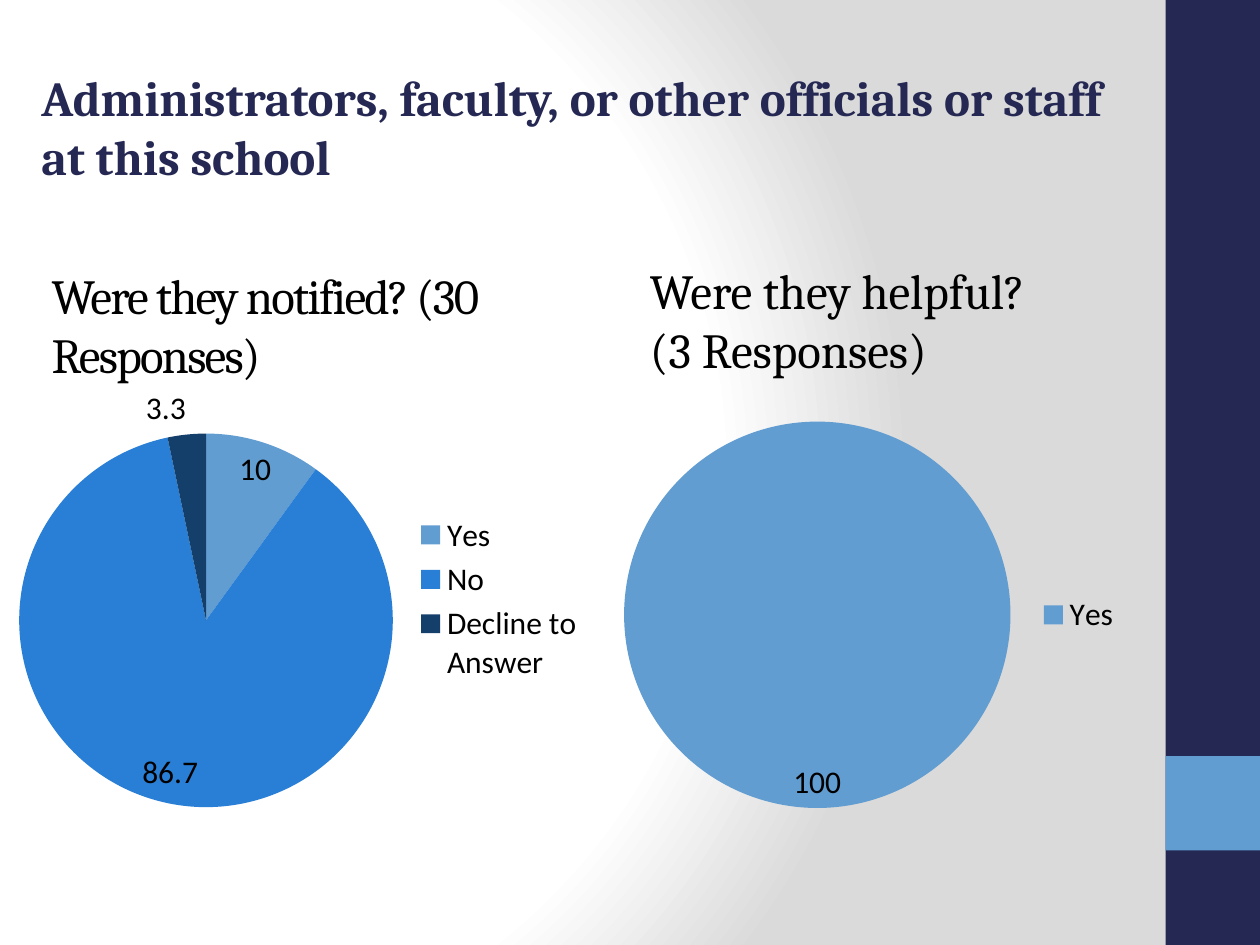
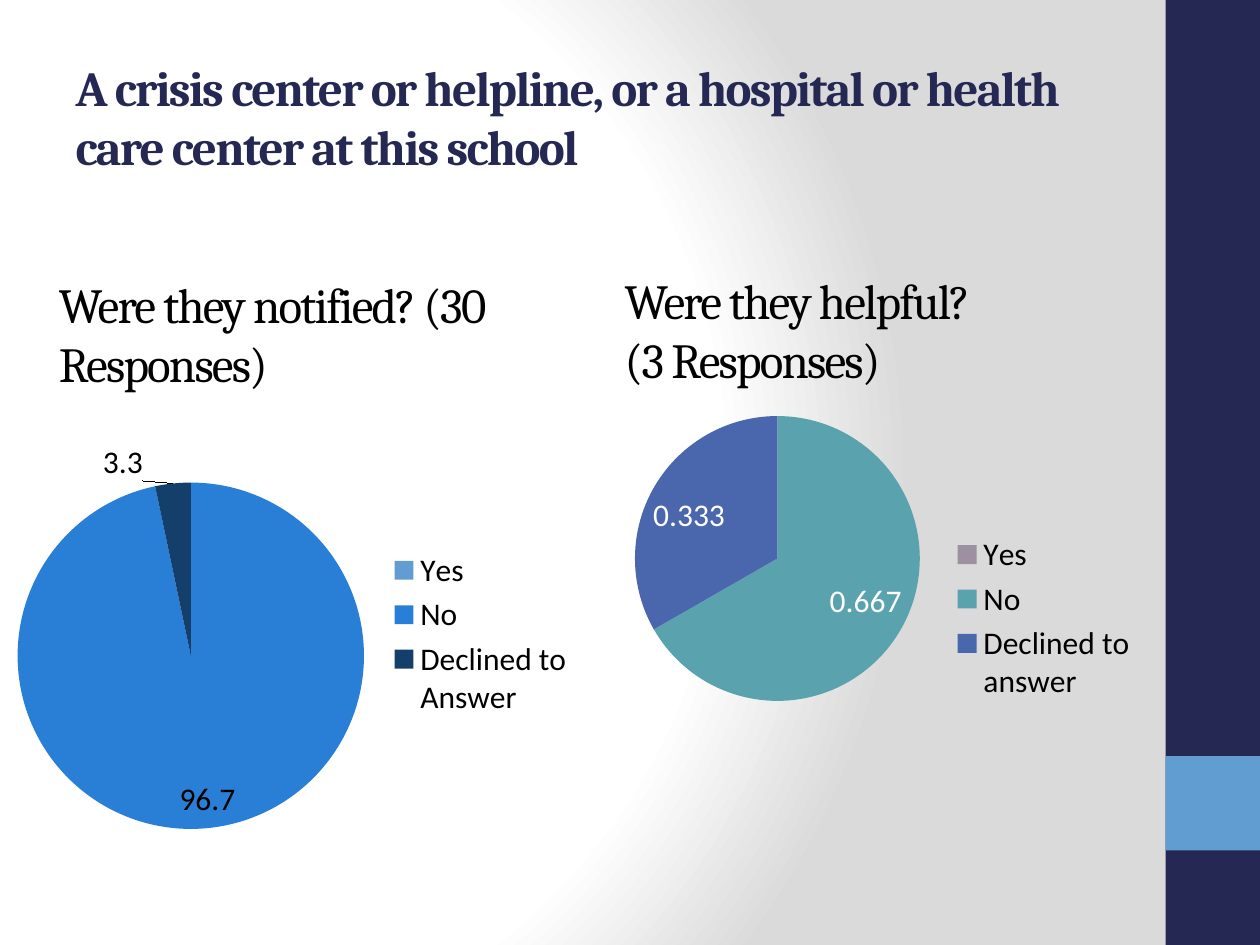
import pptx
import pptx.util
import pptx.oxml
import pptx.oxml.ns
import pptx.chart.data
import pptx.dml.color
import pptx.enum.chart
import pptx.enum.shapes
import pptx.enum.text

Pt = pptx.util.Pt
RGBColor = pptx.dml.color.RGBColor
Anchor = pptx.enum.text.MSO_ANCHOR

NAVY = RGBColor(0x24, 0x28, 0x52)
SKY = RGBColor(0x62, 0x9D, 0xD1)
BLUE = RGBColor(0x29, 0x7F, 0xD5)
DEEP_BLUE = RGBColor(0x14, 0x3F, 0x6A)
MAUVE = RGBColor(0x9D, 0x90, 0xA0)
TEAL = RGBColor(0x5A, 0xA2, 0xAE)
INDIGO = RGBColor(0x4A, 0x66, 0xAC)
BLACK = RGBColor(0, 0, 0)
WHITE = RGBColor(0xFF, 0xFF, 0xFF)
BLUES = (SKY, BLUE, DEEP_BLUE)

NOTIFIED = "Were they notified? (30 Responses)"
HELPFUL = "Were they helpful?\n(3 Responses)"

BACKDROP = f"""<a:gradFill {pptx.oxml.ns.nsdecls('a')} rotWithShape="1"><a:gsLst>
<a:gs pos="0"><a:srgbClr val="FFFFFF"/></a:gs>
<a:gs pos="75000"><a:srgbClr val="FFFFFF"/></a:gs>
<a:gs pos="100000"><a:srgbClr val="DADADA"/></a:gs></a:gsLst>
<a:path path="circle"><a:fillToRect l="20000" t="50000" r="100000" b="50000"/></a:path>
</a:gradFill>"""


def chart_layout(modes, **fractions):
    values = "".join(f'<c:{key} val="{value}"/>' for key, value in fractions.items())
    return pptx.oxml.parse_xml(
        f"<c:layout {pptx.oxml.ns.nsdecls('c')}><c:manualLayout>"
        f"{modes}{values}</c:manualLayout></c:layout>")


class SurveyDeck:
    heading_font = "Cambria"
    chart_font = "Calibri"
    heading_size = Pt(28)
    chart_size = Pt(18)

    def __init__(self):
        self.prs = pptx.Presentation()
        self.prs.slide_width, self.prs.slide_height = Pt(720), Pt(540)
        self.slide = None

    def new_slide(self):
        self.slide = self.prs.slides.add_slide(self.prs.slide_layouts[5])

    def backdrop(self):
        master = self.prs.slide_master
        master.background.fill.solid()
        plain = master.element.xpath("p:cSld/p:bg/p:bgPr/a:solidFill")[0]
        plain.getparent().replace(plain, pptx.oxml.parse_xml(BACKDROP))

    def master_band(self, top, height, color):
        band = self.slide.shapes.add_shape(
            pptx.enum.shapes.MSO_SHAPE.RECTANGLE, Pt(666), Pt(top), Pt(54), Pt(height))
        band.shadow.inherit = False
        band.fill.solid()
        band.fill.fore_color.rgb = color
        band.line.fill.background()
        self.prs.slide_master.shapes.element.append(band.element)

    def title(self, words, box, **style):
        heading = self.slide.shapes.title
        heading.left, heading.top, heading.width, heading.height = map(Pt, box)
        self.set_heading(heading.text_frame, words, **style)

    def text(self, words, box, **style):
        heading = self.slide.shapes.add_textbox(*map(Pt, box))
        self.set_heading(heading.text_frame, words, **style)

    def set_heading(self, frame, words, color=BLACK, bold=False, tight=True,
                    anchor=Anchor.MIDDLE):
        frame.text = words
        frame.word_wrap = True
        frame.auto_size = pptx.enum.text.MSO_AUTO_SIZE.NONE
        frame.vertical_anchor = anchor
        for paragraph in frame.paragraphs:
            paragraph.alignment = pptx.enum.text.PP_ALIGN.LEFT
            for run in paragraph.runs:
                self.style_font(run.font, self.heading_font, self.heading_size, color)
                run.font.bold = bold
                if tight:
                    run.font._element.set("spc", "-100")

    def style_font(self, font, name, size, color):
        font.name, font.size = name, size
        font.color.rgb = color

    def pie(self, box, shares, colors, plot, label_color=BLACK, shifted=None):
        data = pptx.chart.data.CategoryChartData()
        data.categories = list(shares)
        data.add_series("Series 1", list(shares.values()))
        chart = self.slide.shapes.add_chart(
            pptx.enum.chart.XL_CHART_TYPE.PIE, *map(Pt, box), data).chart
        self.style_font(chart.font, self.chart_font, self.chart_size, BLACK)
        chart.has_title = False
        chart.has_legend = True
        chart.legend.position = pptx.enum.chart.XL_LEGEND_POSITION.RIGHT
        chart.legend.include_in_layout = False
        chart.plots[0].vary_by_categories = True

        series = chart.plots[0].series[0]
        best_fit = pptx.enum.chart.XL_LABEL_POSITION.BEST_FIT
        labels = series.data_labels
        labels.show_value = True
        labels.position = best_fit
        self.style_font(labels.font, self.chart_font, self.chart_size, label_color)
        for index, (share, color) in enumerate(zip(shares.values(), colors)):
            point = series.points[index]
            point.format.fill.solid()
            point.format.fill.fore_color.rgb = color
            if share == 0:
                point.data_label.position = best_fit
                self.hide_label(chart, index)
        if shifted is not None:
            series.points[shifted].data_label.position = best_fit
            self.point_label(chart, shifted).insert(1, chart_layout("", x=-0.05, y=0.01))

        area = chart.element.xpath("c:chart/c:plotArea")[0]
        for automatic in area.xpath("c:layout"):
            area.remove(automatic)
        modes = '<c:layoutTarget val="inner"/><c:xMode val="edge"/><c:yMode val="edge"/>'
        area.insert(0, chart_layout(modes, **dict(zip("xywh", plot))))

    def point_label(self, chart, index):
        return chart.element.xpath(f".//c:dLbl[c:idx/@val='{index}']")[0]

    def hide_label(self, chart, index):
        label = self.point_label(chart, index)
        for setting in list(label)[1:]:
            label.remove(setting)
        label.append(pptx.oxml.parse_xml(
            f"<c:delete {pptx.oxml.ns.nsdecls('c')} val=\"1\"/>"))


def main():
    deck = SurveyDeck()
    deck.backdrop()

    deck.new_slide()
    deck.master_band(0, 540, NAVY)
    deck.master_band(432, 54, SKY)
    deck.title(NOTIFIED, (22.3, 140.4, 261.4, 90))
    deck.text("Administrators, faculty, or other officials or staff\nat this school",
              (16.6, 35.3, 650, 75), color=NAVY, bold=True, tight=False,
              anchor=Anchor.TOP)
    deck.pie((0, 185, 341.3, 314), {"Yes": 10, "No": 86.7, "Decline to Answer": 3.3},
             BLUES, (0.03, 0.2, 0.63, 0.68))
    deck.text(HELPFUL, (364.3, 145.4, 277.2, 75), tight=False, anchor=Anchor.TOP)
    deck.pie((341.3, 230.4, 306.7, 242), {"Yes": 100}, BLUES, (0.05, 0.04, 0.72, 0.92))

    deck.new_slide()
    deck.title("A crisis center or helpline, or a hospital or health care center"
               " at this school", (36, 21.6, 599.8, 90), color=NAVY, bold=True)
    deck.text(NOTIFIED, (26.6, 145.4, 261.4, 90))
    deck.text(HELPFUL, (349.9, 143.3, 261.4, 90))
    deck.pie((0, 222.5, 335.5, 279.4), {"Yes": 0, "No": 96.7, "Declined to Answer": 3.3},
             BLUES, (0.03, 0.19, 0.59, 0.71), shifted=2)
    deck.pie((321.8, 205.2, 335.5, 296),
             {"Yes": 0, "No": 0.667, "Declined to answer": 0.333},
             (MAUVE, TEAL, INDIGO), (0.12, 0.11, 0.49, 0.55), label_color=WHITE)

    deck.prs.save("out.pptx")


if __name__ == "__main__":
    main()
